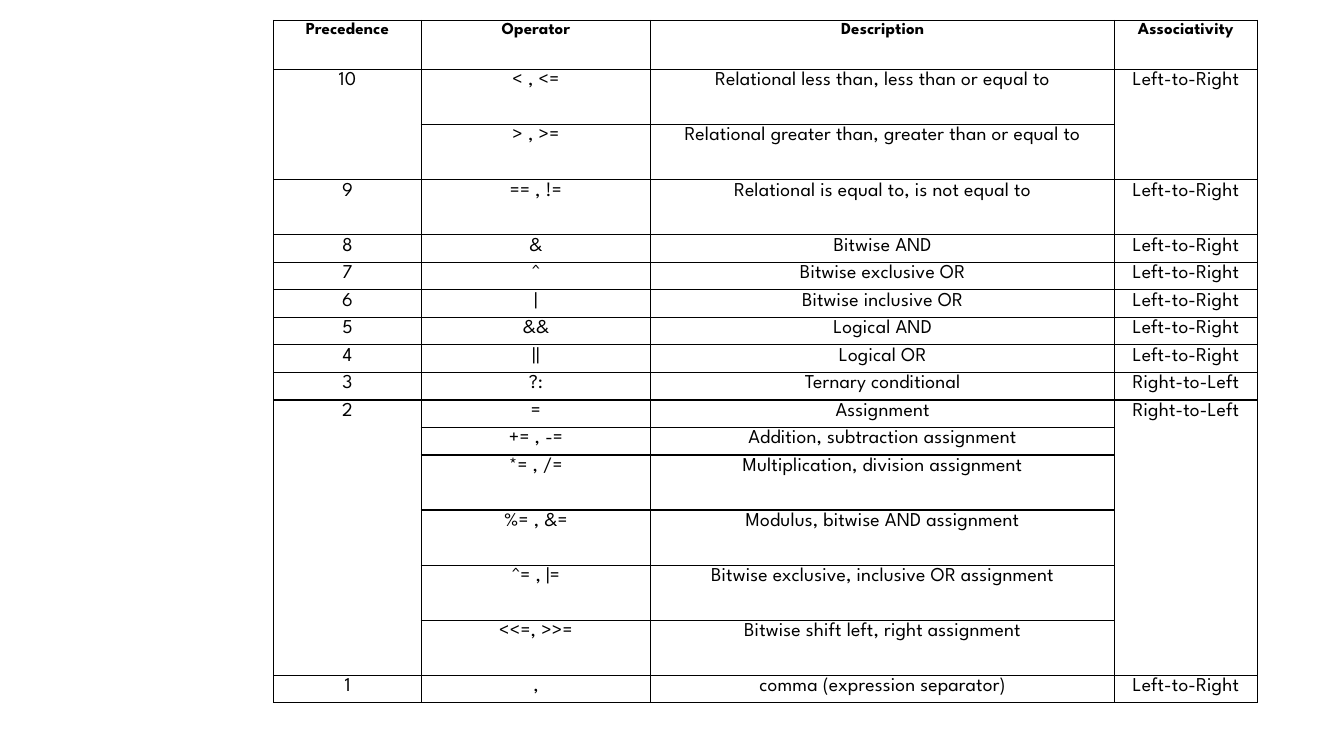
from dataclasses import dataclass

from lxml import etree
from pptx import Presentation
from pptx.dml.color import RGBColor
from pptx.enum.text import MSO_ANCHOR, PP_ALIGN
from pptx.oxml.ns import qn
from pptx.util import Pt

CENTER = PP_ALIGN.CENTER
TOP = MSO_ANCHOR.TOP
BLANK_LAYOUT = 6


@dataclass(frozen=True)
class Theme:
    font: str = "League Spartan"
    ink: str = "000000"
    paper: str = "FFFFFF"
    header_size: int = 12
    body_size: int = 14
    tracking: str = "10"
    line_spacing: float = 1.15
    border: int = 1


THEME = Theme()
HEADER_HEIGHT = 35
LINE_HEIGHT = 19.68
COLUMN_WIDTHS = (105.4, 163.9, 331.4, 101.8)
CELL_FORMAT = {
    "margin_left": Pt(3.6),
    "margin_right": Pt(3.6),
    "margin_top": 0,
    "margin_bottom": 0,
    "vertical_anchor": TOP,
}
HEADINGS = ("Precedence", "Operator", "Description", "Associativity")
LEFT_TO_RIGHT = "Left-to-Right"
RIGHT_TO_LEFT = "Right-to-Left"
LEVELS = (
    ("10", LEFT_TO_RIGHT, (
        ("< , <=", "Relational less than, less than or equal to", 2),
        ("> , >=", "Relational greater than, greater than or equal to", 2),
    )),
    ("9", LEFT_TO_RIGHT, (("== , !=", "Relational is equal to, is not equal to", 2),)),
    ("8", LEFT_TO_RIGHT, (("&", "Bitwise AND", 1),)),
    ("7", LEFT_TO_RIGHT, (("^", "Bitwise exclusive OR", 1),)),
    ("6", LEFT_TO_RIGHT, (("|", "Bitwise inclusive OR", 1),)),
    ("5", LEFT_TO_RIGHT, (("&&", "Logical AND", 1),)),
    ("4", LEFT_TO_RIGHT, (("||", "Logical OR", 1),)),
    ("3", RIGHT_TO_LEFT, (("?:", "Ternary conditional", 1),)),
    ("2", RIGHT_TO_LEFT, (
        ("=", "Assignment", 1),
        ("+= , -=", "Addition, subtraction assignment", 1),
        ("*= , /=", "Multiplication, division assignment", 2),
        ("%= , &=", "Modulus, bitwise AND assignment", 2),
        ("^= , |=", "Bitwise exclusive, inclusive OR assignment", 2),
        ("<<=, >>=", "Bitwise shift left, right assignment", 2),
    )),
    ("1", LEFT_TO_RIGHT, ((",", "comma (expression separator)", 1),)),
)


def add_borders(cell):
    properties = cell._tc.get_or_add_tcPr()
    for position, side in enumerate(("lnL", "lnR", "lnT", "lnB")):
        line = etree.Element(qn(f"a:{side}"), w=str(Pt(THEME.border)))
        fill = etree.SubElement(line, qn("a:solidFill"))
        etree.SubElement(fill, qn("a:srgbClr"), val=THEME.ink)
        properties.insert(position, line)


def write_cell(cell, words, size, bold):
    for name, value in CELL_FORMAT.items():
        setattr(cell, name, value)
    cell.fill.solid()
    cell.fill.fore_color.rgb = RGBColor.from_string(THEME.paper)
    add_borders(cell)
    paragraph = cell.text_frame.paragraphs[0]
    paragraph.alignment = CENTER
    paragraph.line_spacing = THEME.line_spacing
    run = paragraph.add_run()
    run.text = words
    font_format = {"name": THEME.font, "size": Pt(size), "bold": bold}
    for name, value in font_format.items():
        setattr(run.font, name, value)
    run.font.color.rgb = RGBColor.from_string(THEME.ink)
    run._r.get_or_add_rPr().set("spc", THEME.tracking)


def write_row(table, index, entries, height, size=THEME.body_size, bold=False):
    table.rows[index].height = Pt(height)
    for column, words in enumerate(entries):
        write_cell(table.cell(index, column), words, size, bold)


def write_level(table, first, precedence, associativity, operators):
    for offset, (operator, description, lines) in enumerate(operators):
        ends = ("", "") if offset else (precedence, associativity)
        entries = (ends[0], operator, description, ends[1])
        write_row(table, first + offset, entries, lines * LINE_HEIGHT)
    last = first + len(operators) - 1
    if last > first:
        for column in (0, 3):
            table.cell(first, column).merge(table.cell(last, column))
    return last + 1


def add_precedence_table(slide):
    operators = [entry for level in LEVELS for entry in level[2]]
    height = HEADER_HEIGHT + LINE_HEIGHT * sum(entry[2] for entry in operators)
    table = slide.shapes.add_table(
        len(operators) + 1, len(HEADINGS),
        Pt(195.5), Pt(14.6), Pt(sum(COLUMN_WIDTHS)), Pt(height),
    ).table
    table.first_row = False
    table.horz_banding = False
    for column, width in zip(table.columns, COLUMN_WIDTHS):
        column.width = Pt(width)
    write_row(table, 0, HEADINGS, HEADER_HEIGHT, THEME.header_size, True)
    next_row = 1
    for level in LEVELS:
        next_row = write_level(table, next_row, *level)


def main():
    presentation = Presentation()
    presentation.slide_width = Pt(960)
    presentation.slide_height = Pt(540)
    slide = presentation.slides.add_slide(presentation.slide_layouts[BLANK_LAYOUT])
    add_precedence_table(slide)
    presentation.save("out.pptx")


if __name__ == "__main__":
    main()
